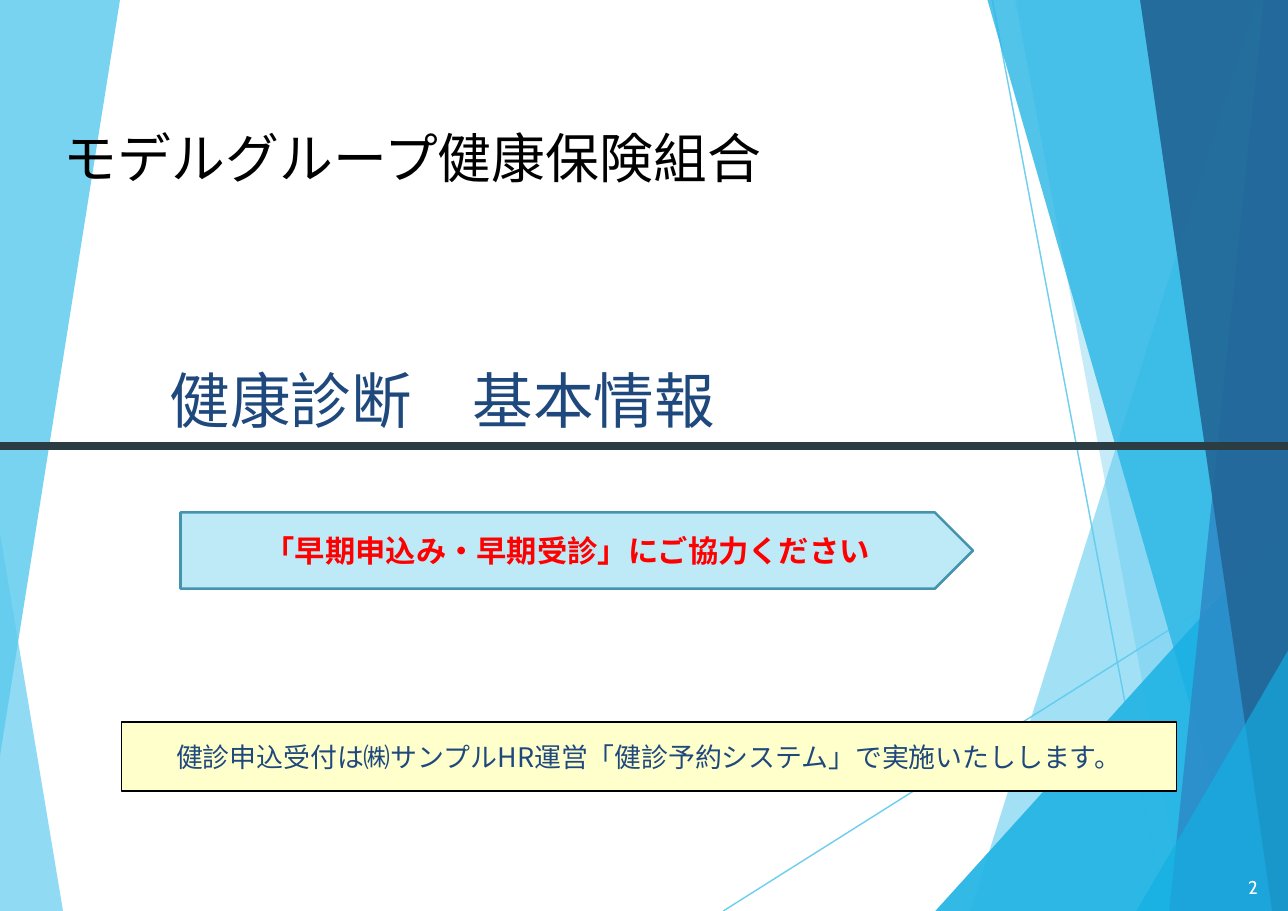
from dataclasses import dataclass

from lxml import etree
from pptx import Presentation
from pptx.dml.color import RGBColor
from pptx.enum.shapes import MSO_CONNECTOR, MSO_SHAPE
from pptx.enum.text import MSO_ANCHOR, MSO_AUTO_SIZE, PP_ALIGN
from pptx.oxml.ns import qn
from pptx.util import Inches, Pt

LEFT, CENTER, RIGHT = PP_ALIGN.LEFT, PP_ALIGN.CENTER, PP_ALIGN.RIGHT
TOP, MIDDLE, BOTTOM = MSO_ANCHOR.TOP, MSO_ANCHOR.MIDDLE, MSO_ANCHOR.BOTTOM
STRAIGHT = MSO_CONNECTOR.STRAIGHT
PENTAGON = MSO_SHAPE.PENTAGON
NO_AUTOFIT = MSO_AUTO_SIZE.NONE

SLIDE_W, SLIDE_H = 10.63, 7.52


@dataclass(frozen=True)
class Theme:
    sky: str = "5FCBEF"
    cyan: str = "16B0E3"
    blue: str = "2E83C3"
    deep: str = "226292"
    divider: str = "2C3C43"
    navy: str = "1F497D"
    black: str = "000000"
    white: str = "FFFFFF"
    red: str = "FF0000"
    note_fill: str = "FFFFCC"
    banner_fill: str = "BEEAF8"
    banner_line: str = "4594AE"
    japanese: str = "Noto Sans CJK JP"
    latin: str = "Arial"
    number: str = "Cabin"
    title_size: int = 36
    group_size: int = 32
    banner_size: int = 18
    note_size: int = 16
    number_size: int = 11


THEME = Theme()

LEFT_FACET = ([(0, 4.4), (0.52, SLIDE_H), (0, SLIDE_H)], THEME.sky, 69)
TOP_LEFT_FACET = ([(0, 0), (0.99, 0), (0, 6.24)], THEME.sky, 84)

# Where each right-hand facet meets the top and the bottom of the slide
BANDS = [
    (10.37, 8.01, THEME.sky, 35),
    (8.38, 9.78, THEME.sky, 20),
    (8.15, 10.31, THEME.cyan, 49),
    (10.43, 9.65, THEME.blue, 69),
    (9.41, 10.5, THEME.deep, 82),
]
# Bottom-left corner and height on the right edge
LOW_CORNER = (7.72, 4.3)
FRONT_CORNER = (9.38, 5.37)
RAYS = [((5.97, SLIDE_H), (SLIDE_W, 4.58)), ((8.19, 0), (9.61, SLIDE_H))]


class SlideBuilder:
    def __init__(self, slide, theme):
        self.slide = slide
        self.theme = theme

    def set_alpha(self, shape, percent):
        for color in shape.element.spPr.iter(qn("a:srgbClr")):
            alpha = etree.SubElement(color, qn("a:alpha"))
            alpha.set("val", str(percent * 1000))

    def facet(self, points, color, opacity):
        corners = [(Inches(x), Inches(y)) for x, y in points]
        builder = self.slide.shapes.build_freeform(*corners[0])
        builder.add_line_segments(corners[1:], close=True)
        facet = builder.convert_to_shape()
        self.paint(facet, color)
        self.set_alpha(facet, opacity)

    def band(self, top_x, bottom_x, color, opacity):
        self.facet([(top_x, 0), (bottom_x, SLIDE_H), (SLIDE_W, SLIDE_H), (SLIDE_W, 0)],
                   color, opacity)

    def corner(self, left, top):
        self.facet([(left, SLIDE_H), (SLIDE_W, top), (SLIDE_W, SLIDE_H)],
                   self.theme.cyan, 65)

    def line(self, start, end, color, width, opacity=100):
        line = self.slide.shapes.add_connector(
            STRAIGHT, *(Inches(v) for v in (*start, *end)))
        line.line.color.rgb = RGBColor.from_string(color)
        line.line.width = Pt(width)
        if opacity < 100:
            self.set_alpha(line, opacity)
        etree.SubElement(line.element.spPr, qn("a:effectLst"))

    def paint(self, shape, fill, outline=None, width=0.75):
        shape.shadow.inherit = False
        shape.fill.solid()
        shape.fill.fore_color.rgb = RGBColor.from_string(fill)
        if outline:
            shape.line.color.rgb = RGBColor.from_string(outline)
            shape.line.width = Pt(width)
        else:
            shape.line.fill.background()

    def set_text(self, shape, text, font, size, color, align=LEFT, anchor=MIDDLE, bold=False):
        frame = shape.text_frame
        frame.text = text
        frame.word_wrap = True
        frame.auto_size = NO_AUTOFIT
        frame.vertical_anchor = anchor
        paragraph = frame.paragraphs[0]
        paragraph.alignment = align
        paragraph.space_before = Pt(0)
        for run in paragraph.runs:
            run.font.name = font
            run.font.size = Pt(size)
            run.font.bold = bold
            run.font.color.rgb = RGBColor.from_string(color)
        for latin in list(shape.element.iter(qn("a:latin"))):
            latin.addnext(etree.Element(qn("a:ea"), typeface=font))

    def text(self, box, *args, **style):
        self.set_text(self.slide.shapes.add_textbox(*map(Inches, box)), *args, **style)

    def banner(self, box, *args, **style):
        banner = self.slide.shapes.add_shape(PENTAGON, *map(Inches, box))
        self.paint(banner, self.theme.banner_fill, self.theme.banner_line, 1.5)
        self.set_text(banner, *args, **style)

    def placeholder(self, index, box, *args, **style):
        """Fill a layout placeholder and bring it in front of the background."""
        holder = self.slide.placeholders[index]
        holder.left, holder.top, holder.width, holder.height = map(Inches, box)
        holder.element.getparent().append(holder.element)
        self.set_text(holder, *args, **style)
        return holder

    def right_facets(self):
        for start, end in RAYS:
            self.line(start, end, self.theme.sky, 0.75, 69)
        for band in BANDS[:2]:
            self.band(*band)
        self.corner(*LOW_CORNER)
        for band in BANDS[2:]:
            self.band(*band)
        self.corner(*FRONT_CORNER)


def main():
    deck = Presentation()
    deck.slide_width, deck.slide_height = Inches(SLIDE_W), Inches(SLIDE_H)
    page = SlideBuilder(deck.slides.add_slide(deck.slide_layouts[0]), THEME)

    page.facet(*LEFT_FACET)
    for _ in range(2):  # two layers deepen the translucent colours
        page.right_facets()
    page.facet(*TOP_LEFT_FACET)
    page.line((0, 3.68), (SLIDE_W, 3.68), THEME.divider, 5)
    page.text((8, 7.12, 2.48, 0.4), "2", THEME.number, THEME.number_size,
              THEME.white, align=RIGHT)

    page.placeholder(0, (1.3, 2.89, 7.09, 0.76), "健康診断　基本情報",
                     THEME.japanese, THEME.title_size, THEME.navy, anchor=BOTTOM)
    note = page.placeholder(
        1, (1, 5.96, 8.71, 0.57),
        "健診申込受付は㈱サンプルHR運営「健診予約システム」で実施いたしします。",
        THEME.japanese, THEME.note_size, THEME.navy, align=CENTER)
    page.paint(note, THEME.note_fill, THEME.black)

    page.text((0.43, 0.98, 6.07, 0.64), "モデルグループ健康保険組合",
              THEME.latin, THEME.group_size, THEME.black, anchor=TOP)
    page.banner((1.49, 4.23, 6.54, 0.63), "「早期申込み・早期受診」にご協力ください",
                THEME.japanese, THEME.banner_size, THEME.red, align=CENTER, bold=True)
    deck.save("out.pptx")


if __name__ == "__main__":
    main()
